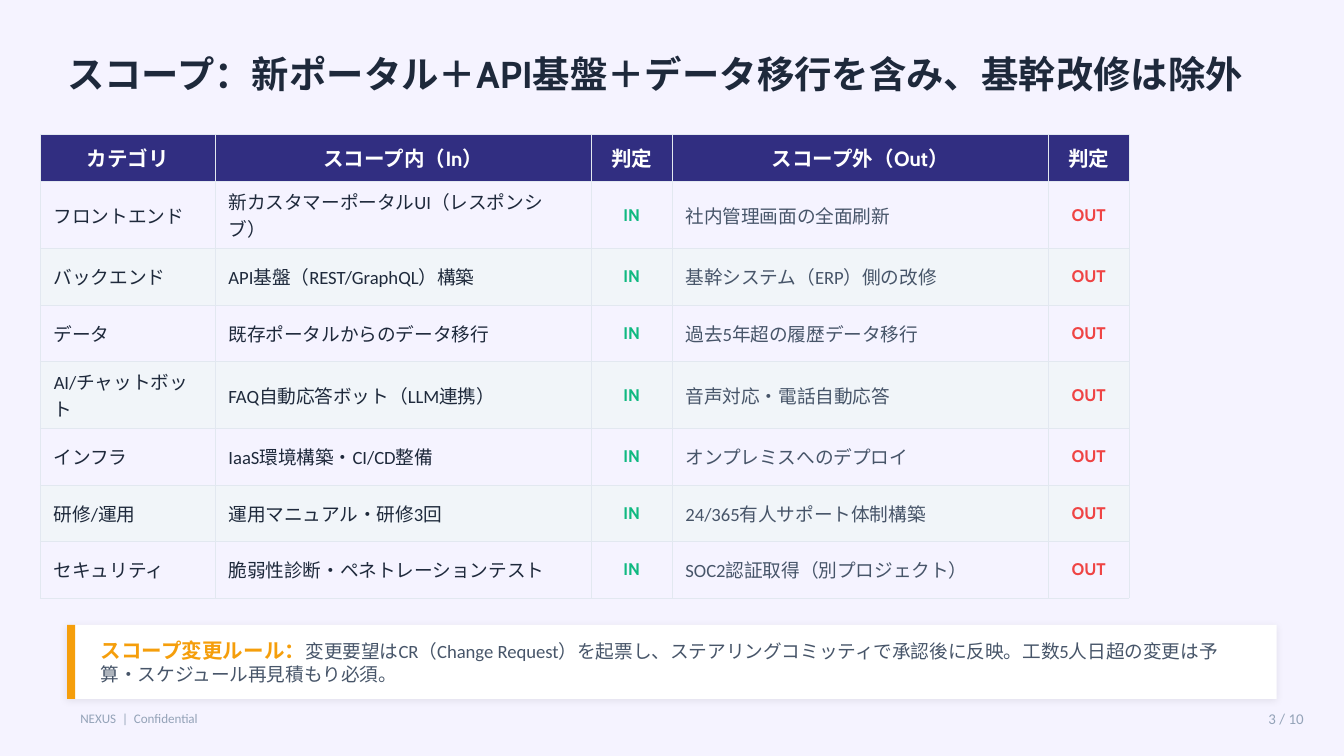
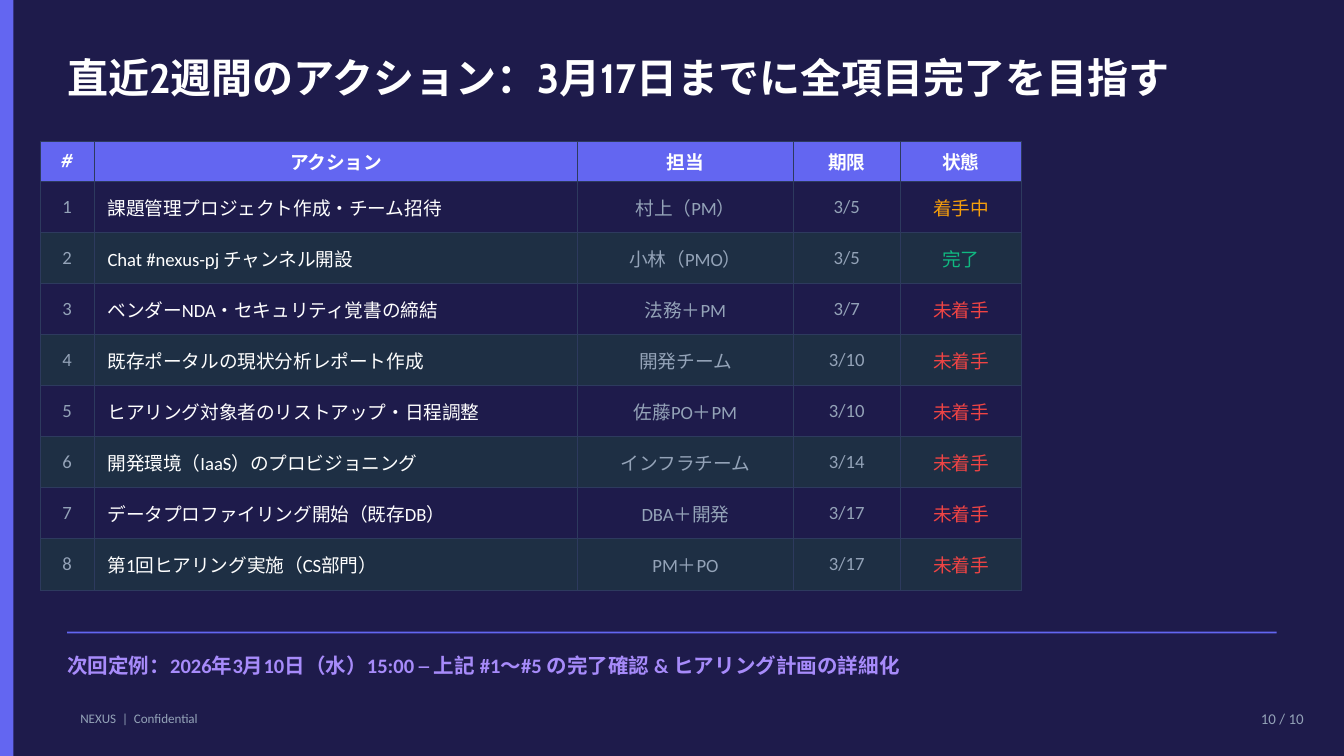
from dataclasses import dataclass
from lxml.etree import SubElement
from pptx import Presentation
from pptx.dml.color import RGBColor
from pptx.enum.shapes import MSO_SHAPE as Shape
from pptx.enum.text import MSO_ANCHOR as Anchor, MSO_AUTO_SIZE as AutoSize, PP_ALIGN as Align
from pptx.oxml import parse_xml
from pptx.oxml.ns import nsdecls, qn
from pptx.util import Inches, Pt

HEAD_FONT, BODY_FONT = "Cabin", "Calibri"
WHITE, INK, SLATE, MUTED = "FFFFFF", "1E293B", "475569", "94A3B8"
INDIGO, AMBER, GREEN, RED, VIOLET = "6366F1", "F59E0B", "10B981", "EF4444", "A78BFA"
PAGE_COUNT = 10
PAGE_WIDTH = 10
PAGE_HEIGHT = PAGE_WIDTH * 9 / 16
LEFT, CONTENT_WIDTH = 0.5, 9
RULE_THICKNESS = 1 / 72


@dataclass
class TextStyle:
    """Look of one piece of text."""
    size: float
    color: str
    face: str = BODY_FONT
    bold: bool = False
    align: Align = Align.LEFT


@dataclass
class GridTheme:
    """Colours and row heights of a table."""
    header: TextStyle
    header_fill: str
    stripe: str
    border: str
    header_height: float
    row_height: float


SCOPE_THEME = GridTheme(TextStyle(11, WHITE, HEAD_FONT, True, Align.CENTER),
                        "312E81", "F1F5F9", "E2E8F0", 0.35, 0.42)
ACTION_THEME = GridTheme(TextStyle(10, WHITE, HEAD_FONT, True, Align.CENTER),
                         INDIGO, "1E2F44", "2D3A5E", 0.3, 0.38)

SCOPE_HEADERS = ["カテゴリ", "スコープ内（In）", "判定", "スコープ外（Out）", "判定"]
SCOPE_ITEMS = [
    ("フロントエンド", "新カスタマーポータルUI（レスポンシブ）", "社内管理画面の全面刷新"),
    ("バックエンド", "API基盤（REST/GraphQL）構築", "基幹システム（ERP）側の改修"),
    ("データ", "既存ポータルからのデータ移行", "過去5年超の履歴データ移行"),
    ("AI/チャットボット", "FAQ自動応答ボット（LLM連携）", "音声対応・電話自動応答"),
    ("インフラ", "IaaS環境構築・CI/CD整備", "オンプレミスへのデプロイ"),
    ("研修/運用", "運用マニュアル・研修3回", "24/365有人サポート体制構築"),
    ("セキュリティ", "脆弱性診断・ペネトレーションテスト", "SOC2認証取得（別プロジェクト）"),
]
ACTION_HEADERS = ["#", "アクション", "担当", "期限", "状態"]
STATUS_COLORS = {"着手中": AMBER, "完了": GREEN, "未着手": RED}
ACTIONS = [
    ("課題管理プロジェクト作成・チーム招待", "村上（PM）", "3/5", "着手中"),
    ("Chat #nexus-pj チャンネル開設", "小林（PMO）", "3/5", "完了"),
    ("ベンダーNDA・セキュリティ覚書の締結", "法務＋PM", "3/7", "未着手"),
    ("既存ポータルの現状分析レポート作成", "開発チーム", "3/10", "未着手"),
    ("ヒアリング対象者のリストアップ・日程調整", "佐藤PO＋PM", "3/10", "未着手"),
    ("開発環境（IaaS）のプロビジョニング", "インフラチーム", "3/14", "未着手"),
    ("データプロファイリング開始（既存DB）", "DBA＋開発", "3/17", "未着手"),
    ("第1回ヒアリング実施（CS部門）", "PM＋PO", "3/17", "未着手"),
]


def rgb(hex_color):
    """Turn a hex string into a colour."""
    return RGBColor.from_string(hex_color)


def inches(*lengths):
    """Turn numbers into lengths."""
    return [Inches(length) for length in lengths]


def style_font(font, style):
    """Apply a text style to a paragraph or run font."""
    font.name, font.size, font.bold = style.face, Pt(style.size), style.bold
    font.color.rgb = rgb(style.color)


def fill_frame(frame, pieces, inset=True):
    """Write one paragraph made of (text, style) pieces."""
    frame.word_wrap = True
    frame.auto_size = AutoSize.NONE
    frame.vertical_anchor = Anchor.MIDDLE
    if not inset:
        frame.margin_left = frame.margin_right = frame.margin_top = frame.margin_bottom = 0
    line = frame.paragraphs[0]
    line.alignment = pieces[0][1].align
    for text, style in pieces:
        run = line.add_run()
        run.text = text
        if len(pieces) > 1:
            style_font(run.font, style)
    if len(pieces) == 1:
        style_font(line.font, pieces[0][1])


def add_text(slide, box, pieces, inset=True):
    """Add a text box."""
    fill_frame(slide.shapes.add_textbox(*inches(*box)).text_frame, pieces, inset)


def add_block(slide, box, color):
    """Add a plain filled rectangle."""
    block = slide.shapes.add_shape(Shape.RECTANGLE, *inches(*box))
    block.shadow.inherit = False
    block.fill.solid()
    block.fill.fore_color.rgb = rgb(color)
    block.line.fill.background()
    return block


def add_soft_shadow(block):
    """Give a block a faint shadow."""
    effects = block._element.spPr.find(qn("a:effectLst"))
    shadow = SubElement(effects, qn("a:outerShdw"), blurRad=str(Pt(4)), dist=str(Pt(1)),
                        dir=str(135 * 60000), algn="bl", rotWithShape="0")
    tint = SubElement(shadow, qn("a:srgbClr"), val="000000")
    SubElement(tint, qn("a:alpha"), val="8000")


def add_page(deck, title, title_height, title_style, background, number):
    """Add a slide with its background, title and footer."""
    slide = deck.slides.add_slide(deck.slide_layouts[5])
    slide.background.fill.solid()
    slide.background.fill.fore_color.rgb = rgb(background)
    heading = slide.shapes.title
    heading.left, heading.top, heading.width, heading.height = inches(
        LEFT, 0.3, CONTENT_WIDTH, title_height)
    fill_frame(heading.text_frame, [(title, title_style)], inset=False)
    add_text(slide, (9.1, 5.22, 0.7, 0.25),
             [(f"{number} / {PAGE_COUNT}", TextStyle(8, MUTED, align=Align.RIGHT))])
    add_text(slide, (LEFT, 5.22, 3, 0.25), [("NEXUS  |  Confidential", TextStyle(7, MUTED))])
    return slide


def format_cell(cell, text, style, fill, border):
    """Write and paint one table cell."""
    cell.vertical_anchor = Anchor.MIDDLE
    line = cell.text_frame.paragraphs[0]
    line.text, line.alignment = text, style.align
    style_font(line.font, style)
    if fill:
        cell.fill.solid()
        cell.fill.fore_color.rgb = rgb(fill)
    else:
        cell.fill.background()
    for position, side in enumerate("LRTB"):
        cell._tc.tcPr.insert(position, parse_xml(
            f'<a:ln{side} {nsdecls("a")} w="{Pt(0.5)}"><a:solidFill>'
            f'<a:srgbClr val="{border}"/></a:solidFill></a:ln{side}>'))


def add_grid(slide, left, top, widths, headers, rows, theme):
    """Add a striped table whose rows hold (text, style) pairs."""
    height = theme.header_height + theme.row_height * len(rows)
    grid = slide.shapes.add_table(len(rows) + 1, len(widths),
                                  *inches(left, top, sum(widths), height)).table
    grid.horz_banding = grid.first_row = False
    for column, width in zip(grid.columns, widths):
        column.width = Inches(width)
    lines = [[(text, theme.header) for text in headers], *rows]
    for index, line in enumerate(lines):
        grid.rows[index].height = Inches(theme.row_height if index else theme.header_height)
        stripe = theme.stripe if index % 2 == 0 else None
        fill = stripe if index else theme.header_fill
        for column, (text, style) in enumerate(line):
            format_cell(grid.cell(index, column), text, style, fill, theme.border)


def add_rule_card(slide, left, top, width, height):
    """Add the card that states the scope change rule."""
    add_soft_shadow(add_block(slide, (left, top, width, height), WHITE))
    add_block(slide, (left, top, 0.06, height), AMBER)
    add_text(slide, (left + 0.25, top + 0.05, width - 0.5, height - 0.1), [
        ("スコープ変更ルール：", TextStyle(11, AMBER, HEAD_FONT, True)),
        ("変更要望はCR（Change Request）を起票し、ステアリングコミッティで承認後に反映。"
         "工数5人日超の変更は予算・スケジュール再見積もり必須。", TextStyle(10, SLATE)),
    ], inset=False)


def add_next_meeting(slide, left, top, width):
    """Add the rule line and the note on the next meeting."""
    add_block(slide, (left, top, width, RULE_THICKNESS), INDIGO)
    add_text(slide, (left, top + 0.1, width, 0.3), [
        ("次回定例：2026年3月10日（水）15:00 ─ 上記 #1〜#5 の完了確認 & ヒアリング計画の詳細化",
         TextStyle(11, VIOLET, bold=True))], inset=False)


def build_scope(deck):
    """Build the scope slide."""
    slide = add_page(deck, "スコープ：新ポータル＋API基盤＋データ移行を含み、基幹改修は除外",
                     0.5, TextStyle(20, INK, HEAD_FONT, True), "F5F3FF", 3)
    included, excluded = TextStyle(10, INK), TextStyle(10, SLATE)
    verdict_in = ("IN", TextStyle(9, GREEN, HEAD_FONT, True, Align.CENTER))
    verdict_out = ("OUT", TextStyle(9, RED, HEAD_FONT, True, Align.CENTER))
    rows = [[(category, included), (inside, included), verdict_in,
             (outside, excluded), verdict_out] for category, inside, outside in SCOPE_ITEMS]
    add_grid(slide, 0.3, 1, [1.3, 2.8, 0.6, 2.8, 0.6], SCOPE_HEADERS, rows, SCOPE_THEME)
    add_rule_card(slide, LEFT, 4.65, CONTENT_WIDTH, 0.55)


def build_actions(deck):
    """Build the action list slide."""
    slide = add_page(deck, "直近2週間のアクション：3月17日までに全項目完了を目指す",
                     0.55, TextStyle(22, WHITE, HEAD_FONT, True), "1E1B4B", PAGE_COUNT)
    add_block(slide, (0, 0, 0.1, PAGE_HEIGHT), INDIGO)
    task, detail = TextStyle(10, WHITE), TextStyle(10, MUTED, align=Align.CENTER)
    rows = [[(str(number), detail), (action, task), (owner, detail), (due, detail),
             (status, TextStyle(10, STATUS_COLORS[status], align=Align.CENTER))]
            for number, (action, owner, due, status) in enumerate(ACTIONS, 1)]
    add_grid(slide, 0.3, 1.05, [0.4, 3.6, 1.6, 0.8, 0.9], ACTION_HEADERS, rows, ACTION_THEME)
    add_next_meeting(slide, LEFT, 4.7, CONTENT_WIDTH)


def main():
    """Build and save the deck."""
    deck = Presentation()
    deck.slide_width, deck.slide_height = inches(PAGE_WIDTH, PAGE_HEIGHT)
    build_scope(deck)
    build_actions(deck)
    deck.save("out.pptx")


if __name__ == "__main__":
    main()
